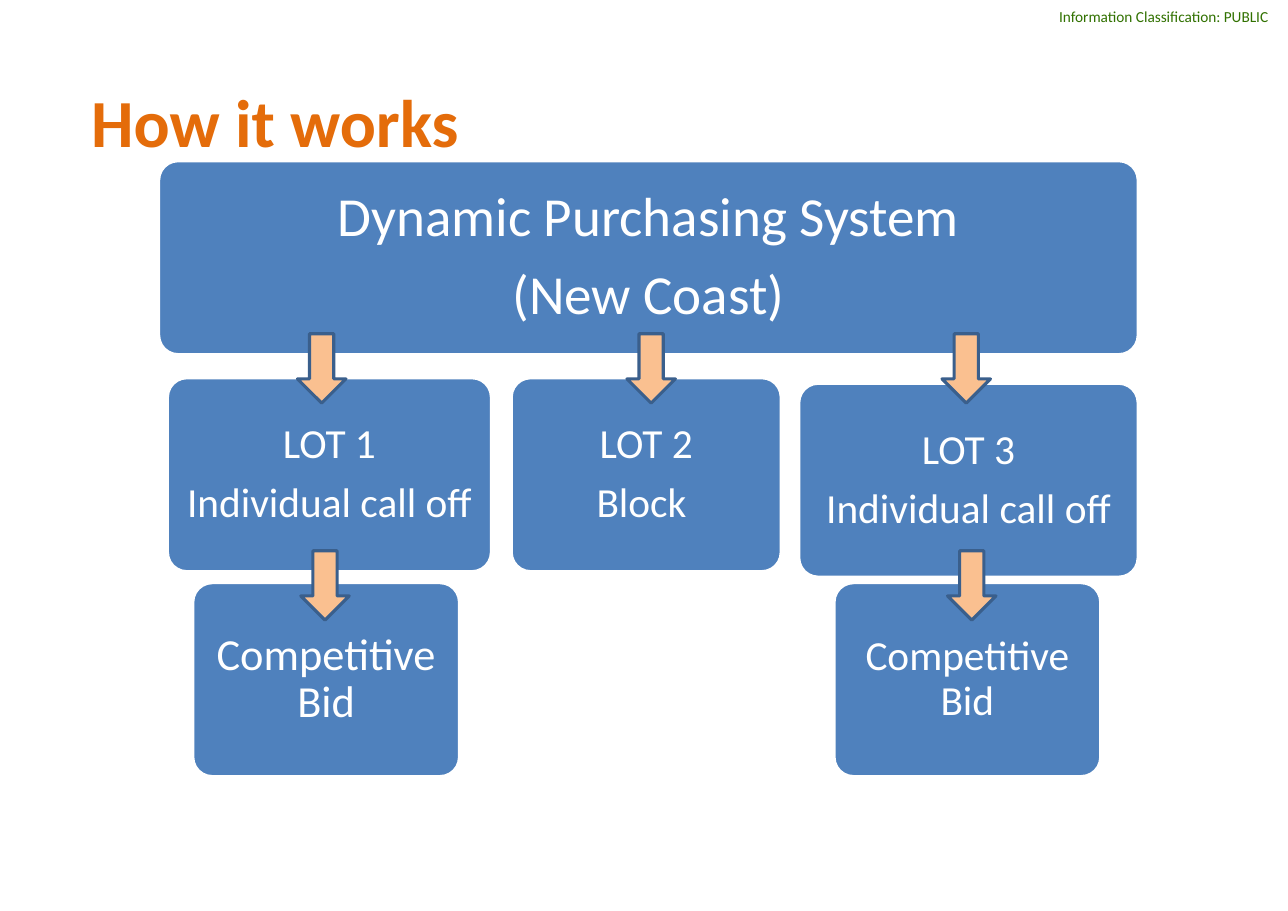
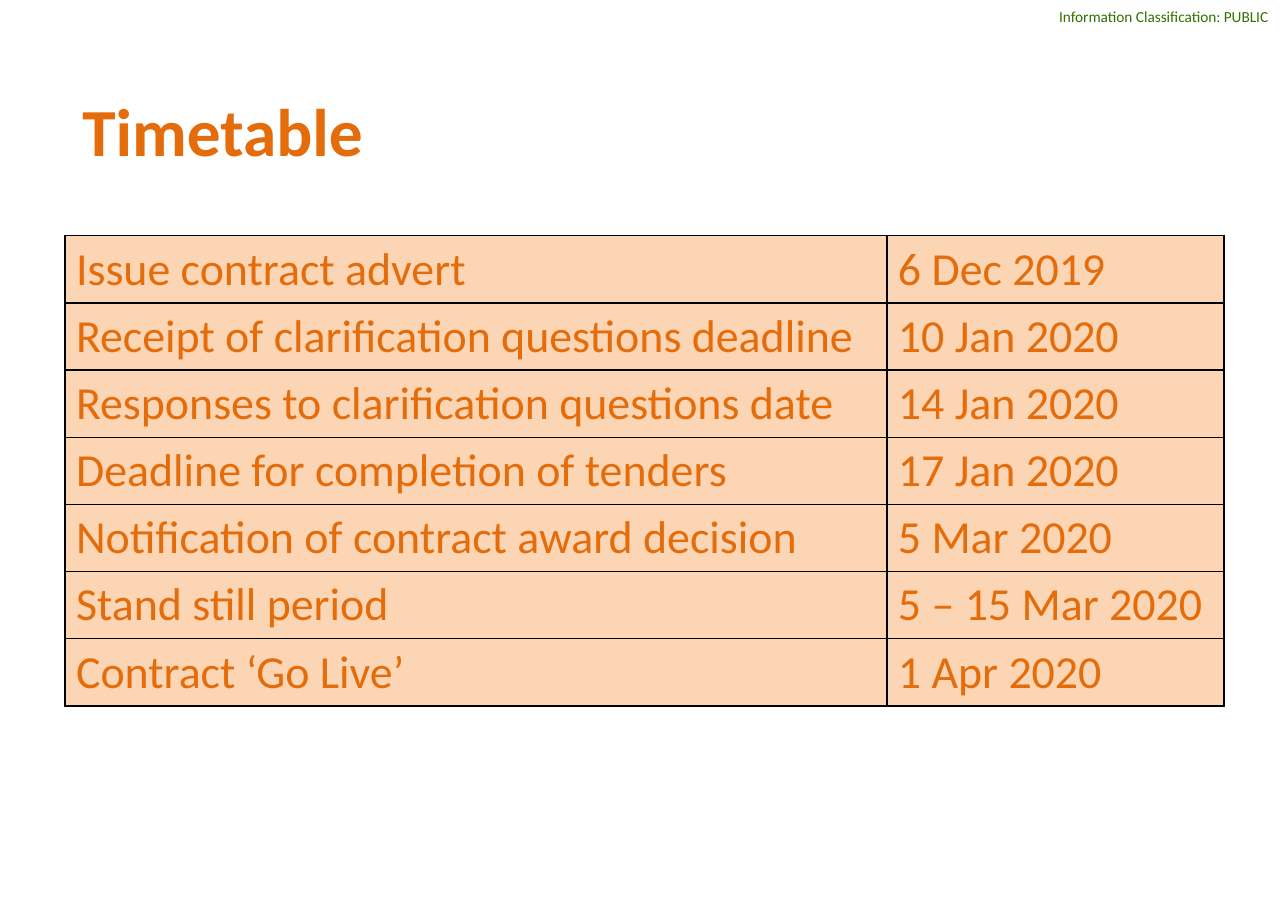
from lxml import etree
from pptx import Presentation
from pptx.dml.color import RGBColor
from pptx.enum.shapes import MSO_SHAPE as Shape
from pptx.enum.text import MSO_ANCHOR as Anchor, PP_ALIGN as Align
from pptx.oxml.ns import qn
from pptx.util import Inches, Pt

FONT = "Calibri"
ORANGE, GREEN, WHITE, BLACK = "E46C0A", "317100", "FFFFFF", "000000"
BLUE, ARROW_FILL, ARROW_EDGE, CELL_FILL = "4F81BD", "FAC090", "3A5F8C", "FCD5B5"

BOX_HEIGHT = 1.76
LOT_TOP, BID_TOP = 3.43, 5.29
# lines, text size, inset, left, top, width
BOXES = [
    (["Dynamic Purchasing System", "(New Coast)"], 36, 0.15, 1.44, 1.46, 8.89),
    (["LOT 1", "Individual call off"], 27, 0.11, 1.52, LOT_TOP, 2.94),
    (["Competitive Bid"], 29, 0.12, 1.75, BID_TOP, 2.42),
    (["LOT 2", "Block "], 27, 0.11, 4.64, LOT_TOP, 2.45),
    (["LOT 3", "Individual call off"], 27, 0.11, 7.25, LOT_TOP + 0.05, 3.08),
    (["Competitive Bid"], 27, 0.11, 7.57, BID_TOP, 2.42),
]
# top of each row of arrows, with the left edges in it
ARROWS = {3.03: [2.7, 5.69, 8.55], 5: [2.73, 8.6]}

TIMETABLE = [
    ("Issue contract advert", "6 Dec 2019"),
    ("Receipt of clarification questions deadline", "10 Jan 2020"),
    ("Responses to clarification questions date", "14 Jan 2020"),
    ("Deadline for completion of tenders", "17 Jan 2020"),
    ("Notification of contract award decision", "5 Mar 2020"),
    ("Stand still period", "5 – 15 Mar 2020"),
    ("Contract ‘Go Live’", "1 Apr 2020"),
]


def rgb(value):
    return RGBColor.from_string(value)


def style(paragraph, size, color, bold=False):
    font = paragraph.font
    font.name, font.size, font.bold = FONT, Pt(size), bold
    font.color.rgb = rgb(color)


def set_insets(frame, left, top, right, bottom):
    frame.margin_left, frame.margin_top = Inches(left), Inches(top)
    frame.margin_right, frame.margin_bottom = Inches(right), Inches(bottom)


def add_label(slide, text, left, top, width, height, size, color, bold=False):
    box = slide.shapes.add_textbox(Inches(left), Inches(top), Inches(width), Inches(height))
    frame = box.text_frame
    frame.word_wrap = True
    frame.vertical_anchor = Anchor.MIDDLE
    frame.text = text
    style(frame.paragraphs[0], size, color, bold)
    return frame


def add_titled_slide(deck, title, left, top):
    """Add a blank slide with the classification mark and a title."""
    slide = deck.slides.add_slide(deck.slide_layouts[6])
    mark = add_label(slide, "Information Classification: PUBLIC", 9.44, 0, 2.26, 0.29, 10, GREEN)
    set_insets(mark, 0, 0, 0.19, 0)
    mark.paragraphs[0].alignment = Align.RIGHT
    add_label(slide, title, left, top, 10.07, 0.89, 44, ORANGE, bold=True)
    return slide


def add_filled_shape(slide, preset, left, top, width, height, fill, edge):
    shape = slide.shapes.add_shape(
        preset, Inches(left), Inches(top), Inches(width), Inches(height))
    shape.shadow.inherit = False
    shape.fill.solid()
    shape.fill.fore_color.rgb = rgb(fill)
    shape.line.color.rgb = rgb(edge)
    shape.line.width = Pt(2)
    return shape


def add_flow_box(slide, lines, size, inset, left, top, width):
    box = add_filled_shape(
        slide, Shape.ROUNDED_RECTANGLE, left, top, width, BOX_HEIGHT, BLUE, WHITE)
    box.adjustments[0] = 0.1
    frame = box.text_frame
    frame.word_wrap = True
    frame.vertical_anchor = Anchor.MIDDLE
    set_insets(frame, inset, inset, inset, inset)
    frame.text = "\n".join(lines)
    for paragraph in frame.paragraphs:
        paragraph.alignment = Align.CENTER
        paragraph.line_spacing = 0.9
        paragraph.space_after = Pt(round(size * 0.35, 1))
        style(paragraph, size, WHITE)


def add_cell_borders(cell):
    """Put thin black lines round a cell; they must come before its fill."""
    properties = cell._tc.get_or_add_tcPr()
    for side in ("a:lnL", "a:lnR", "a:lnT", "a:lnB"):
        line = etree.SubElement(properties, qn(side), w=str(Pt(1)))
        solid = etree.SubElement(line, qn("a:solidFill"))
        etree.SubElement(solid, qn("a:srgbClr"), val=BLACK)


def add_timetable(slide, left, top, column_widths, row_height):
    table = slide.shapes.add_table(
        len(TIMETABLE), len(column_widths), Inches(left), Inches(top),
        Inches(sum(column_widths)), Inches(row_height * len(TIMETABLE))).table
    table.first_row = table.horz_banding = False
    for column, width in zip(table.columns, column_widths):
        column.width = Inches(width)
    for row, entries in zip(table.rows, TIMETABLE):
        row.height = Inches(row_height)
        for cell, entry in zip(row.cells, entries):
            add_cell_borders(cell)
            cell.fill.solid()
            cell.fill.fore_color.rgb = rgb(CELL_FILL)
            cell.vertical_anchor = Anchor.MIDDLE
            cell.text = entry
            style(cell.text_frame.paragraphs[0], 30, ORANGE)


def build_process_slide(deck):
    slide = add_titled_slide(deck, "How it works", 0.73, 0.65)
    for box in BOXES:
        add_flow_box(slide, *box)
    for top, lefts in ARROWS.items():
        for left in lefts:
            add_filled_shape(
                slide, Shape.DOWN_ARROW, left, top, 0.44, 0.63, ARROW_FILL, ARROW_EDGE)


def build_timetable_slide(deck):
    slide = add_titled_slide(deck, "Timetable", 0.65, 0.73)
    add_timetable(slide, 0.59, 2.14, (7.46, 3.06), 0.61)


def main():
    deck = Presentation()
    deck.slide_width, deck.slide_height = Inches(11.69), Inches(8.27)
    build_process_slide(deck)
    build_timetable_slide(deck)
    deck.save("out.pptx")


if __name__ == "__main__":
    main()
